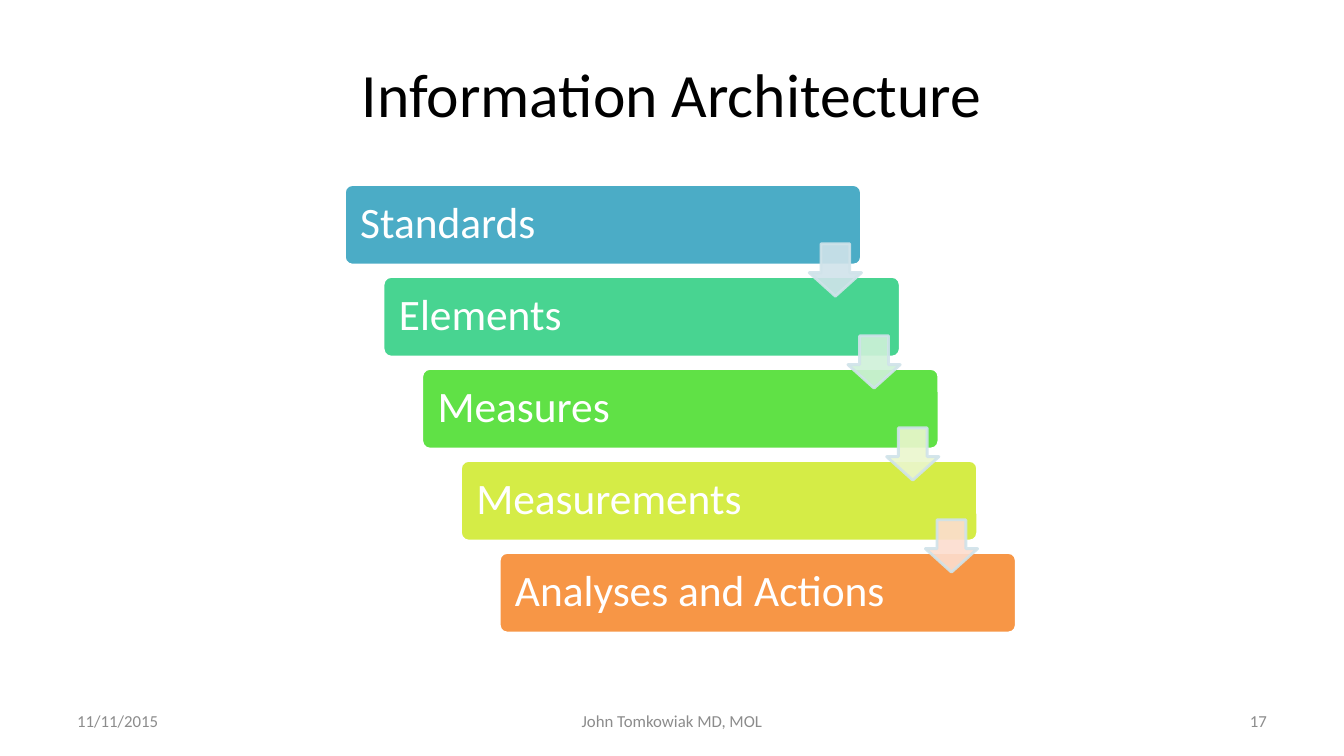
from lxml.etree import SubElement
from pptx import Presentation
from pptx.dml.color import RGBColor
from pptx.enum.shapes import MSO_SHAPE
from pptx.enum.text import MSO_ANCHOR, PP_ALIGN
from pptx.oxml.ns import qn
from pptx.util import Pt

COLORS = {
    "title": "000000", "white": "FFFFFF", "footer": "8C8C8C",
    "arrow_line": "D0E3EA",
}
# Label, bar colour, colour of the arrow leading to the next bar
STEPS = [
    ("Standards", "4BACC6", "D0E3EA"),
    ("Elements", "48D491", "CFF1D9"),
    ("Measures", "60E146", "EBF7CE"),
    ("Measurements", "D5EC46", "FCDDCF"),
    ("Analyses and Actions", "F79646", None),
]
BAR_LEFT, BAR_TOP, BAR_WIDTH, BAR_HEIGHT = 246, 131.8, 369.4, 57.6
STEP_X, STEP_Y = 27.65, 65.7
ARROW_LEFT, ARROW_TOP, ARROW_SIZE = 578, 174.2, 37.4


def box(left, top, width, height):
    return Pt(left), Pt(top), Pt(width), Pt(height)


def write(sp, text, size, color, align=PP_ALIGN.LEFT, inset=7.2, spacing=None):
    tf = sp.text_frame
    tf.word_wrap = True
    tf.vertical_anchor = MSO_ANCHOR.MIDDLE
    tf.margin_left = tf.margin_right = Pt(inset)
    p = tf.paragraphs[0]
    p.alignment = align
    p.line_spacing = spacing
    r = p.add_run()
    r.text = text
    r.font.name = "Calibri"
    r.font.size = Pt(size)
    r.font.color.rgb = RGBColor.from_string(color)


def set_opacity(fill_format, percent):
    """Add an alpha value to a solid fill's colour."""
    color = fill_format._xPr.find(qn("a:solidFill"))[0]
    SubElement(color, qn("a:alpha"), val=str(percent * 1000))


def add_shape(s, kind, place, fill, line, adjustments):
    sp = s.shapes.add_shape(kind, *box(*place))
    sp.shadow.inherit = False
    sp.fill.solid()
    sp.fill.fore_color.rgb = RGBColor.from_string(fill)
    sp.line.color.rgb = RGBColor.from_string(line)
    sp.line.width = Pt(2)
    for i, value in enumerate(adjustments):
        sp.adjustments[i] = value
    return sp


def add_bar(s, i, label, color):
    place = (BAR_LEFT + i * STEP_X, BAR_TOP + i * STEP_Y, BAR_WIDTH, BAR_HEIGHT)
    sp = add_shape(s, MSO_SHAPE.ROUNDED_RECTANGLE, place, color, COLORS["white"], [0.1])
    write(sp, label, 31, COLORS["white"], inset=9.6, spacing=0.9)


def add_arrow(s, i, color):
    place = (ARROW_LEFT + i * STEP_X, ARROW_TOP + i * STEP_Y, ARROW_SIZE, ARROW_SIZE)
    sp = add_shape(s, MSO_SHAPE.DOWN_ARROW, place, color, COLORS["arrow_line"], [0.55, 0.45])
    set_opacity(sp.fill, 90)
    set_opacity(sp.line.fill, 90)


def add_footer(s, text, left, width, align):
    sp = s.shapes.add_textbox(*box(left, 500.5, width, 28.8))
    write(sp, text, 12, COLORS["footer"], align)


def main():
    prs = Presentation()
    prs.slide_width, prs.slide_height = Pt(960), Pt(540)
    s = prs.slides.add_slide(prs.slide_layouts[5])

    title = s.shapes.title
    title.left, title.top, title.width, title.height = box(48, 21.6, 864, 90)
    write(title, "Information Architecture", 44, COLORS["title"], PP_ALIGN.CENTER)

    for i, (label, color, _) in enumerate(STEPS):
        add_bar(s, i, label, color)
    for i, (_, _, color) in enumerate(STEPS[:-1]):
        add_arrow(s, i, color)

    add_footer(s, "11/11/2015", 48, 224, PP_ALIGN.LEFT)
    add_footer(s, "John Tomkowiak MD, MOL", 328, 304, PP_ALIGN.CENTER)
    add_footer(s, "17", 688, 224, PP_ALIGN.RIGHT)
    prs.save("out.pptx")


if __name__ == "__main__":
    main()
